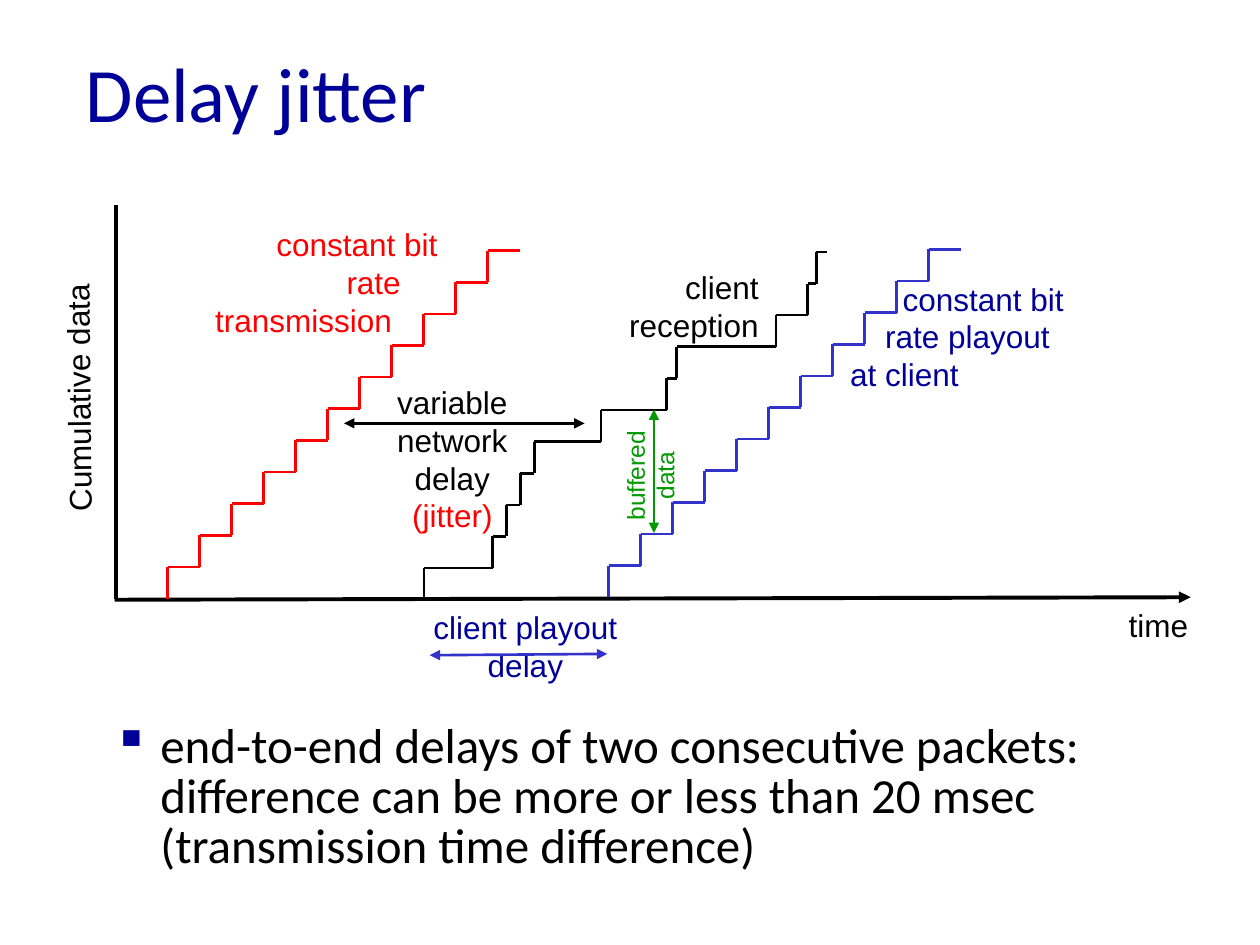
from itertools import pairwise
from lxml import etree
from pptx import Presentation, util as u
from pptx.dml.color import RGBColor
from pptx.enum import shapes, text
from pptx.oxml.ns import qn

COLORS = {
    "black": "000000",
    "red": "FF0000",
    "navy": "000099",
    "blue": "3333CC",
    "green": "009900",
}
COLUMNS, ROWS = 100, 75
ALIGN = text.PP_ALIGN


class Board:
    def __init__(self):
        self.deck = Presentation()
        self.deck.slide_width = u.Inches(10)
        self.deck.slide_height = u.Inches(7.5)
        self.page = self.deck.slides.add_slide(self.deck.slide_layouts[5])

    def x(self, columns):
        return round(self.deck.slide_width * columns / COLUMNS)

    def y(self, rows):
        return round(self.deck.slide_height * rows / ROWS)

    def frame(self, left, top, width, height):
        return self.x(left), self.y(top), self.x(width), self.y(height)

    def style(self, font, size, color, name="Arial"):
        font.name, font.size = name, u.Pt(size)
        font.color.rgb = RGBColor.from_string(COLORS[color])

    def title(self, words, place):
        box = self.page.shapes.title
        box.left, box.top, box.width, box.height = self.frame(*place)
        box.text_frame.vertical_anchor = text.MSO_ANCHOR.MIDDLE
        para = box.text_frame.paragraphs[0]
        para.text = words
        para.alignment = ALIGN.LEFT
        self.style(para.font, 44, "navy", "Calibri")

    def line(self, start, end, color, width=1.5, heads=()):
        line = self.page.shapes.add_connector(
            shapes.MSO_CONNECTOR.STRAIGHT,
            self.x(start[0]), self.y(start[1]), self.x(end[0]), self.y(end[1]))
        line.line.width = u.Pt(width)
        line.line.color.rgb = RGBColor.from_string(COLORS[color])
        outline = line.line._get_or_add_ln()
        for head in heads:
            etree.SubElement(outline, qn(f"a:{head}"), type="triangle")
        etree.SubElement(line._element.spPr, qn("a:effectLst"))

    def arrow(self, start, end, color):
        self.line(start, end, color, heads=("headEnd", "tailEnd"))

    def stairs(self, edges, base, color, rise=2.51):
        for step, (left, right) in enumerate(pairwise(edges)):
            bottom = base - step * rise
            self.line((left, bottom), (left, bottom - rise), color)
            self.line((left, bottom - rise), (right, bottom - rise), color)

    def label(self, lines, place, color="black", size=18, align=ALIGN.LEFT,
              turn=0, wrap=False, indents=(), accents=()):
        box = self.page.shapes.add_textbox(*self.frame(*place))
        box.rotation = turn
        box.text_frame.word_wrap = wrap
        for index, words in enumerate(lines):
            para = (box.text_frame.add_paragraph() if index
                    else box.text_frame.paragraphs[0])
            para.text = words
            para.alignment = align
            if indents:
                para._p.get_or_add_pPr().set("marL", str(self.x(indents[index])))
            self.style(para.font, size, "red" if words in accents else color)

    def bullet(self, words, place):
        box = self.page.shapes.add_textbox(*self.frame(*place))
        box.text_frame.word_wrap = True
        para = box.text_frame.paragraphs[0]
        para.text = words
        para.line_spacing = 0.85
        properties = para._p.get_or_add_pPr()
        properties.set("marL", str(self.x(3.75)))
        properties.set("indent", str(-self.x(3.75)))
        color = etree.SubElement(properties, qn("a:buClr"))
        etree.SubElement(color, qn("a:srgbClr"), val=COLORS["navy"])
        etree.SubElement(properties, qn("a:buChar"), char="▪")
        self.style(para.font, 28, "black", "Calibri")


def even_edges(start, tread=2.54, steps=11):
    return [start + tread * step for step in range(steps + 1)]


def main():
    board = Board()
    board.title("Delay jitter", (5.8, 2.5, 89.3, 9.5))

    board.line((9.2, 16.3), (9.2, 47.5), "black", 2.25)
    board.line((9.1, 47.6), (94.5, 47.4), "black", 2.25, ("tailEnd",))
    board.label(["Cumulative data"], (-4.5, 28.9, 21.4, 4), turn=269.4, wrap=True)
    board.label(["time"], (88.6, 47.6, 6.8, 4))

    board.stairs(even_edges(13.3), 47.5, "red")
    board.label(["constant bit", "rate", "transmission"], (16.1, 17.4, 20.4, 10.1),
                "red", wrap=True, indents=(4.86, 10.42, 0))

    reception = [33.65, 39.1, 40.2, 41.3, 42.4, 47.7,
                 52.9, 53.7, 61.6, 64.1, 64.8, 65.6]
    board.stairs(reception, 47.6, "black")
    board.label(["variable", "network", "delay", "(jitter)"], (30.4, 29.9, 11, 13.1),
                align=ALIGN.CENTER, accents=("(jitter)",))
    board.arrow((27.3, 33.6), (46.4, 33.6), "black")
    board.label(["client", "reception"], (48.8, 20.8, 12.4, 7.1), align=ALIGN.RIGHT)

    board.stairs(even_edges(48.3), 47.4, "blue")
    board.label(["constant bit", "rate playout", "at client"], (65.8, 21.7, 20.4, 10.1),
                "navy", wrap=True, indents=(4.86, 3.47, 0.69))
    board.label(["client playout", "delay"], (32.5, 47.8, 18.4, 7), "navy",
                align=ALIGN.CENTER, wrap=True)
    board.arrow((34.1, 52), (48.2, 51.9), "blue")

    board.arrow((51.9, 42.3), (51.9, 32.5), "green")
    board.label(["buffered", "data"], (47, 34.9, 9.2, 5.7), "green", 14,
                ALIGN.CENTER, 270)

    board.bullet("end-to-end delays of two consecutive packets: difference can be "
                 "more or less than 20 msec (transmission time difference)",
                 (8, 56.9, 85, 9.7))
    board.deck.save("out.pptx")


if __name__ == "__main__":
    main()
